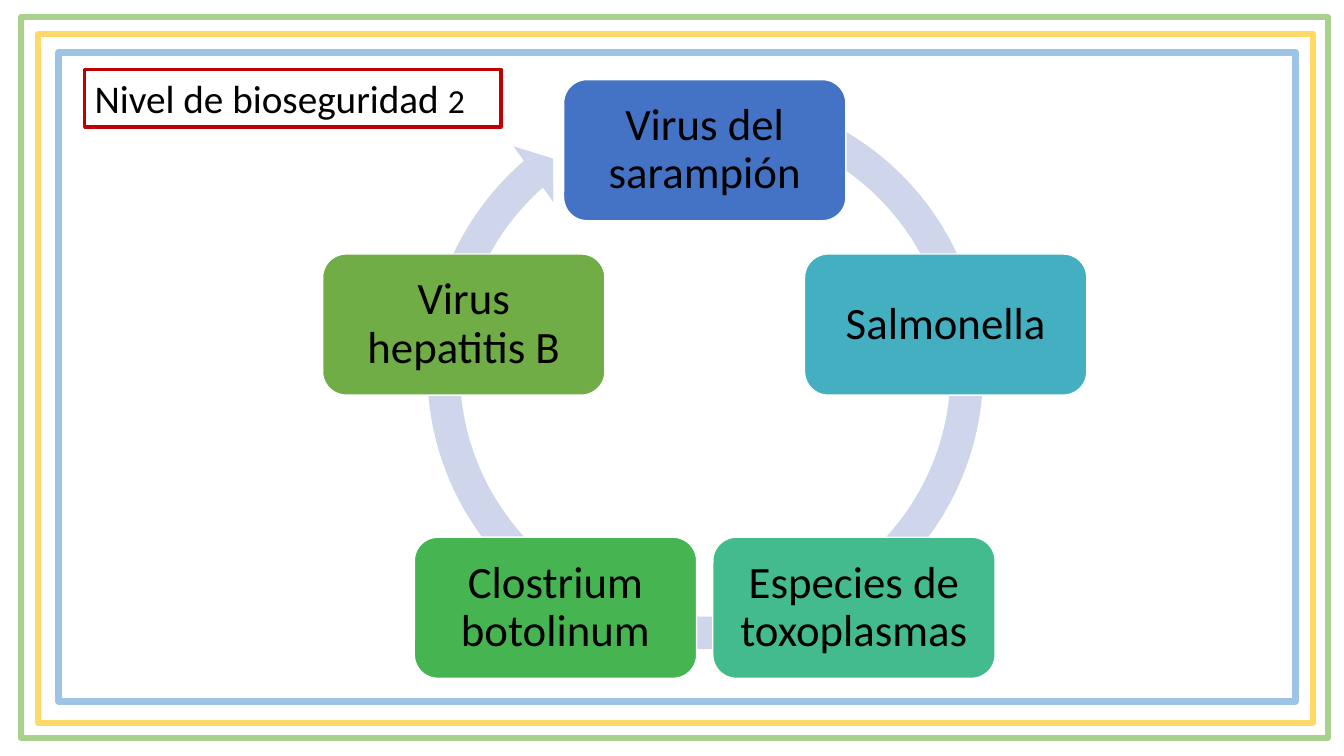
import math
from dataclasses import dataclass

from pptx import Presentation
from pptx.dml.color import RGBColor
from pptx.enum.shapes import MSO_SHAPE
from pptx.enum.text import MSO_ANCHOR, MSO_AUTO_SIZE, PP_ALIGN
from pptx.util import Emu, Pt

RECT, ROUND_RECT = MSO_SHAPE.RECTANGLE, MSO_SHAPE.ROUNDED_RECTANGLE
CIRCULAR_ARROW = MSO_SHAPE.CIRCULAR_ARROW
TOP, MIDDLE = MSO_ANCHOR.TOP, MSO_ANCHOR.MIDDLE
LEFT, CENTER = PP_ALIGN.LEFT, PP_ALIGN.CENTER
GROW = MSO_AUTO_SIZE.SHAPE_TO_FIT_TEXT

FONT = "Calibri"
EMU_PER_PX = 9144  # 100 px to the inch
CYCLE_X, CYCLE_Y, CYCLE_RADIUS = 699, 400, 251
NODE_W, NODE_H = 280, 140


@dataclass
class Box:
    left: int
    top: int
    width: int
    height: int


@dataclass
class Frame:
    box: Box
    color: str


@dataclass
class Node:
    text: str
    fill: str


@dataclass
class TextRun:
    text: str
    size: int


FRAMES = [
    Frame(Box(21, 17, 1296, 715), "A9D18E"),
    Frame(Box(38, 34, 1264, 683), "FFD966"),
    Frame(Box(58, 52, 1227, 644), "9DC3E6"),
]
NODES = [  # clockwise from the top
    Node("Virus del sarampión", "4472C4"),
    Node("Salmonella", "43AFC0"),
    Node("Especies de toxoplasmas", "43BB8D"),
    Node("Clostrium botolinum", "45B451"),
    Node("Virus hepatitis B", "70AD47"),
]
TITLE = [TextRun("Nivel de bioseguridad ", 28), TextRun("2", 24)]


def px(n: float) -> Emu:
    return Emu(round(n * EMU_PER_PX))


def rgb(color: str) -> RGBColor:
    return RGBColor.from_string(color)


def add_box(slide, kind, box: Box, fill: str = "", line: str = "", weight: float = 1):
    s = slide.shapes.add_shape(
        kind, px(box.left), px(box.top), px(box.width), px(box.height))
    s.shadow.inherit = False
    if fill:
        s.fill.solid()
        s.fill.fore_color.rgb = rgb(fill)
    else:
        s.fill.background()
    if line:
        s.line.color.rgb = rgb(line)
        s.line.width = Pt(weight)
    else:
        s.line.fill.background()
    return s


def write(s, runs: list[TextRun], frame_format: dict, paragraph_format: dict) -> None:
    tf = s.text_frame
    p = tf.paragraphs[0]
    for target, values in ((tf, frame_format), (p, paragraph_format)):
        for name, value in values.items():
            setattr(target, name, value)
    for run in runs:
        r = p.add_run()
        r.text = run.text
        r.font.name = FONT
        r.font.size = Pt(run.size)
        r.font.color.rgb = rgb("000000")


def add_node(slide, node: Node, index: int) -> None:
    angle = 2 * math.pi * index / len(NODES)
    x = CYCLE_X + CYCLE_RADIUS * math.sin(angle)
    y = CYCLE_Y - CYCLE_RADIUS * math.cos(angle)
    box = Box(round(x - NODE_W / 2), round(y - NODE_H / 2), NODE_W, NODE_H)
    s = add_box(slide, ROUND_RECT, box, node.fill, "FFFFFF")
    margins = {f"margin_{side}": px(6) for side in ("left", "top", "right", "bottom")}
    write(s, [TextRun(node.text, 32)],
          {"word_wrap": True, "vertical_anchor": MIDDLE, **margins},
          {"alignment": CENTER, "line_spacing": 0.9})


def main() -> None:
    prs = Presentation()
    prs.slide_width, prs.slide_height = px(1333), px(750)
    slide = prs.slides.add_slide(prs.slide_layouts[6])

    # Nested border frames
    for frame in FRAMES:
        add_box(slide, RECT, frame.box, line=frame.color, weight=4.5)

    # Cycle arrow behind the nodes
    arrow = add_box(slide, CIRCULAR_ARROW, Box(406, 75, 587, 587), "CFD5EA")
    for i, value in enumerate((0.055, 3.307, 137.367, 174.099, 0.058)):
        arrow.adjustments[i] = value

    # Cycle nodes
    for i, node in enumerate(NODES):
        add_node(slide, node, i)

    # Title box
    title = add_box(slide, RECT, Box(84, 69, 413, 57), line="C00000", weight=2.25)
    write(title, TITLE,
          {"word_wrap": True, "vertical_anchor": TOP, "auto_size": GROW},
          {"alignment": LEFT})

    prs.save("out.pptx")


if __name__ == "__main__":
    main()
